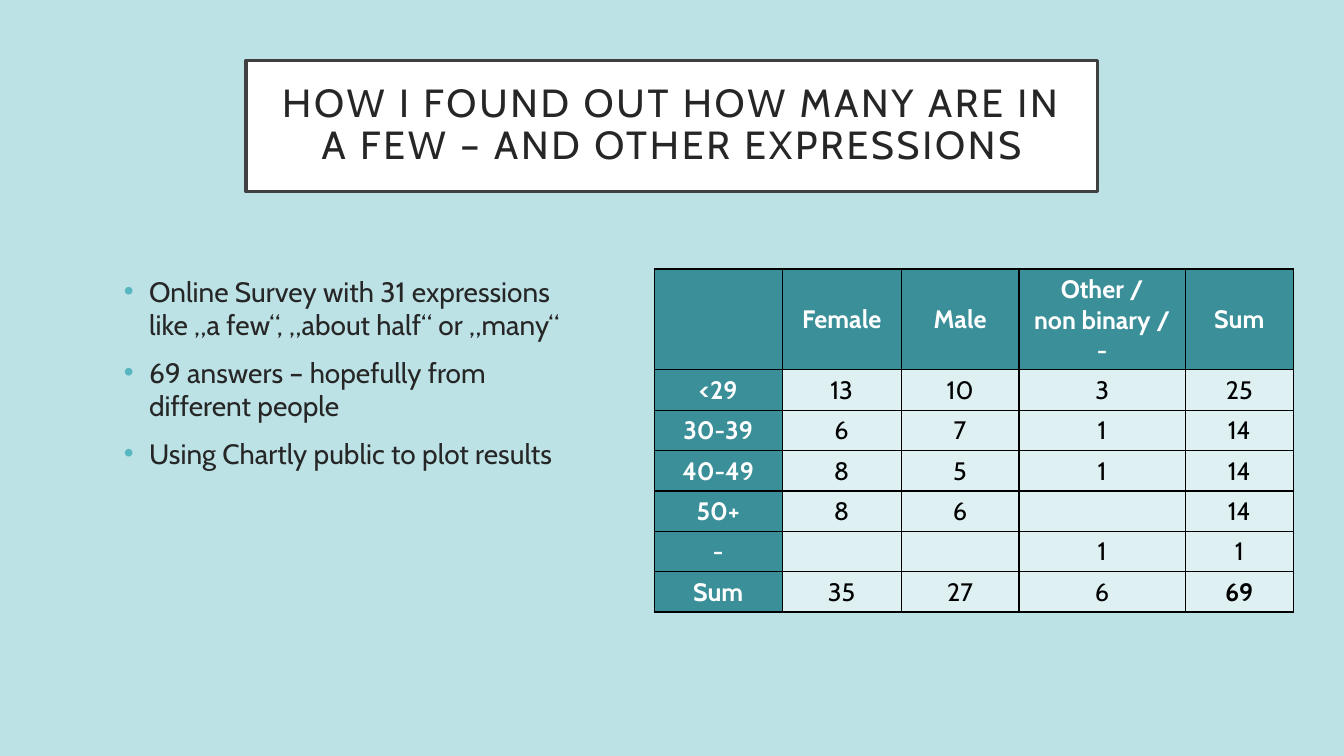
from dataclasses import dataclass

from lxml.etree import SubElement
from pptx import Presentation
from pptx.dml.color import RGBColor
from pptx.enum.text import MSO_ANCHOR as Anchor, MSO_AUTO_SIZE as AutoSize, PP_ALIGN as Align
from pptx.oxml.ns import qn
from pptx.util import Pt

FONT = "Cabin"
BACKGROUND = RGBColor(0xBC, 0xE2, 0xE6)
WHITE = RGBColor(0xFF, 0xFF, 0xFF)
BLACK = RGBColor(0, 0, 0)
INK = RGBColor(0x26, 0x26, 0x26)
FRAME = RGBColor(0x40, 0x40, 0x40)
BULLET = RGBColor(0x58, 0xB6, 0xC0)
HEADER = RGBColor(0x3A, 0x8F, 0x98)
BODY = RGBColor(0xDE, 0xF0, 0xF2)


@dataclass(frozen=True)
class Box:
    left: float
    top: float
    width: float
    height: float

    def lengths(self) -> tuple:
        return Pt(self.left), Pt(self.top), Pt(self.width), Pt(self.height)


@dataclass(frozen=True)
class Style:
    size: float
    color: RGBColor
    bold: bool = False


TITLE_BOX = Box(175.7, 43.2, 608.4, 93.6)
BULLET_BOX = Box(81.4, 192.2, 336.2, 244.1)
TABLE_BOX = Box(467.3, 192.2, 456.5, 233.3)

TITLE = "HOW I FOUND OUT HOW MANY ARE IN A FEW – AND OTHER EXPRESSIONS"
BULLETS = [
    "Online Survey with 31 expressions like „a few“, „about half“ or „many“",
    "69 answers – hopefully from different people",
    "Using Chartly public to plot results",
]
COLUMN_WIDTHS = [91.4, 85, 84.2, 118.8, 77.1]
HEADER_HEIGHT, ROW_HEIGHT = 69.1, 27.4
ANSWERS = [
    ["", "Female", "Male", "Other /\nnon binary / -", "Sum"],
    ["<29", "13", "10", "3", "25"],
    ["30-39", "6", "7", "1", "14"],
    ["40-49", "8", "5", "1", "14"],
    ["50+", "8", "6", "", "14"],
    ["-", "", "", "1", "1"],
    ["Sum", "35", "27", "6", "69"],
]


def add_span(para, text: str, style: Style):
    span = para.add_run()
    span.text = text
    span.font.name = FONT
    span.font.size = Pt(style.size)
    span.font.bold = style.bold
    span.font.color.rgb = style.color
    return span


def add_solid_fill(parent, color: RGBColor) -> None:
    SubElement(SubElement(parent, qn("a:solidFill")), qn("a:srgbClr"), val=str(color))


def add_title(page) -> None:
    title = page.shapes.title
    title.left, title.top, title.width, title.height = TITLE_BOX.lengths()
    title.fill.solid()
    title.fill.fore_color.rgb = WHITE
    title.line.color.rgb = FRAME
    title.line.width = Pt(2.5)
    frame = title.text_frame
    frame.word_wrap = True
    frame.auto_size = AutoSize.NONE
    frame.vertical_anchor = Anchor.MIDDLE
    frame.margin_left = frame.margin_right = Pt(14.4)
    frame.margin_top = frame.margin_bottom = Pt(14.4)
    para = frame.paragraphs[0]
    para.alignment = Align.CENTER
    para.line_spacing = 0.9
    span = add_span(para, TITLE, Style(28, INK))
    span.font._element.set("spc", "200")


def add_bullets(page) -> None:
    frame = page.shapes.add_textbox(*BULLET_BOX.lengths()).text_frame
    frame.word_wrap = True
    for index, text in enumerate(BULLETS):
        para = frame.add_paragraph() if index else frame.paragraphs[0]
        para.space_before = Pt(10)
        props = para._p.get_or_add_pPr()
        props.set("marL", str(Pt(18)))
        props.set("indent", str(-Pt(18)))
        color = SubElement(props, qn("a:buClr"))
        SubElement(color, qn("a:srgbClr"), val=str(BULLET))
        SubElement(props, qn("a:buFont"), typeface="Arial")
        SubElement(props, qn("a:buChar"), char="•")
        add_span(para, text, Style(20, INK))


def format_cell(cell, text: str, fill: RGBColor, style: Style) -> None:
    props = cell._tc.get_or_add_tcPr()
    for side in ("lnL", "lnR", "lnT", "lnB"):
        add_solid_fill(SubElement(props, qn(f"a:{side}"), w=str(Pt(1))), BLACK)
    cell.fill.solid()
    cell.fill.fore_color.rgb = fill
    cell.vertical_anchor = Anchor.MIDDLE
    frame = cell.text_frame
    for index, line in enumerate(text.split("\n") if text else []):
        para = frame.add_paragraph() if index else frame.paragraphs[0]
        para.alignment = Align.CENTER
        add_span(para, line, style)


def add_answer_table(page) -> None:
    last_row, last_column = len(ANSWERS) - 1, len(COLUMN_WIDTHS) - 1
    table = page.shapes.add_table(last_row + 1, last_column + 1, *TABLE_BOX.lengths()).table
    table.horz_banding = False
    table.first_row = False
    for column, width in zip(table.columns, COLUMN_WIDTHS):
        column.width = Pt(width)
    for r, values in enumerate(ANSWERS):
        table.rows[r].height = Pt(ROW_HEIGHT if r else HEADER_HEIGHT)
        for c, text in enumerate(values):
            is_header = r == 0 or c == 0
            is_total = (r, c) == (last_row, last_column)
            style = Style(18, WHITE if is_header else BLACK, is_header or is_total)
            format_cell(table.cell(r, c), text, HEADER if is_header else BODY, style)


def main() -> None:
    deck = Presentation()
    deck.slide_width, deck.slide_height = Pt(960), Pt(540)
    page = deck.slides.add_slide(deck.slide_layouts.get_by_name("Title Only"))
    page.background.fill.solid()
    page.background.fill.fore_color.rgb = BACKGROUND
    add_title(page)
    add_bullets(page)
    add_answer_table(page)
    deck.save("out.pptx")


if __name__ == "__main__":
    main()
